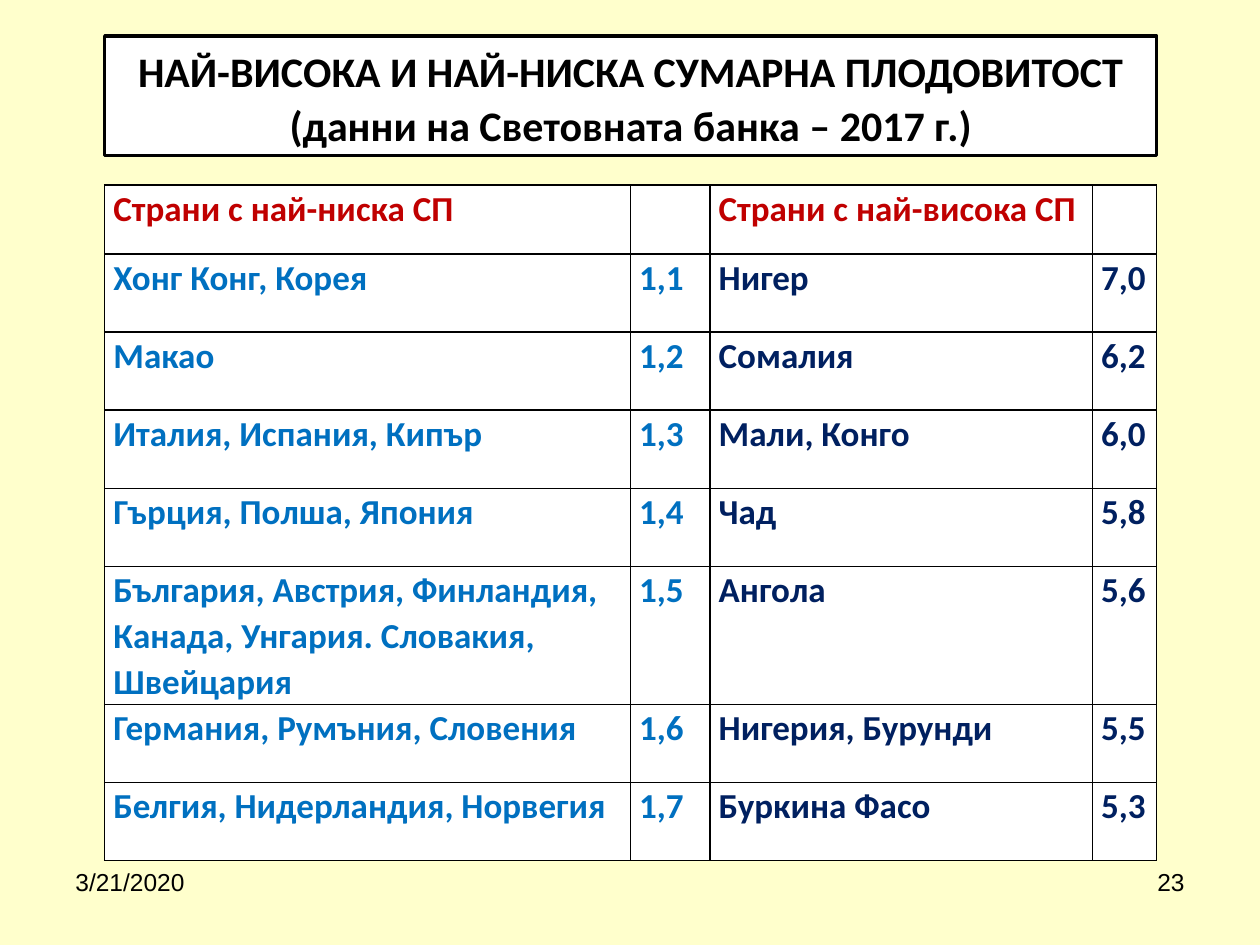
"""Build the slide comparing countries with the lowest and highest total fertility."""
from dataclasses import dataclass

from lxml import etree
from pptx import Presentation
from pptx.dml.color import RGBColor
from pptx.enum import shapes, text
from pptx.oxml import ns
from pptx.util import Pt

TITLE = ["НАЙ-ВИСОКА И НАЙ-НИСКА СУМАРНА ПЛОДОВИТОСТ",
         "(данни на Световната банка – 2017 г.)"]
HEADER = ("Страни с най-ниска СП", "", "Страни с най-висока СП", "")
COUNTRIES = [
    ("Хонг Конг, Корея", "1,1", "Нигер", "7,0"),
    ("Макао", "1,2", "Сомалия", "6,2"),
    ("Италия, Испания, Кипър", "1,3", "Мали, Конго", "6,0"),
    ("Гърция, Полша, Япония", "1,4", "Чад", "5,8"),
    ("България, Австрия, Финландия, Канада, Унгария. Словакия, Швейцария",
     "1,5", "Ангола", "5,6"),
    ("Германия, Румъния, Словения", "1,6", "Нигерия, Бурунди", "5,5"),
    ("Белгия, Нидерландия, Норвегия", "1,7", "Буркина Фасо", "5,3"),
]
DATE, NUMBER = "3/21/2020", "23"

COLUMN_WIDTHS = (300.4, 45.5, 218.5, 36.8)
HEADER_HEIGHT, ROW_HEIGHT, TALL_ROW_HEIGHT = 39.6, 44.64, 78.8
TALL_ROW = 5
LEFT, TITLE_TOP, TITLE_HEIGHT, TABLE_TOP = 59.8, 20.6, 68.4, 105.6
PAGE_WIDTH, PAGE_HEIGHT, MARGIN = 720, 540, 36
FOOTER_TOP, FOOTER_WIDTH, FOOTER_HEIGHT = 491.8, 168, 37.5


@dataclass(frozen=True)
class Theme:
    page: str = "FFFFCC"
    panel: str = "FFFFFF"
    ink: str = "000000"
    header: str = "C00000"
    lowest: str = "0070C0"
    highest: str = "002060"
    body_font: str = "Calibri"
    footer_font: str = "Arial"
    title_size: int = 24
    table_size: int = 20
    footer_size: int = 14
    line_spacing: float = 1.07


THEME = Theme()


def paint(fill, color):
    fill.solid()
    fill.fore_color.rgb = RGBColor.from_string(color)


def style(para, font, size, color, bold=False, align=text.PP_ALIGN.LEFT):
    para.alignment = align
    for span in para.runs:
        span.font.name = font
        span.font.size = Pt(size)
        span.font.bold = bold
        span.font.color.rgb = RGBColor.from_string(color)


def add_title(page):
    box = page.shapes.add_shape(shapes.MSO_SHAPE.RECTANGLE, Pt(LEFT), Pt(TITLE_TOP),
                                Pt(sum(COLUMN_WIDTHS)), Pt(TITLE_HEIGHT))
    box.shadow.inherit = False
    paint(box.fill, THEME.panel)
    paint(box.line.fill, THEME.ink)
    box.line.width = Pt(2)
    frame = box.text_frame
    frame.word_wrap = True
    frame.auto_size = text.MSO_AUTO_SIZE.SHAPE_TO_FIT_TEXT
    frame.vertical_anchor = text.MSO_ANCHOR.TOP
    frame.text = "\n".join(TITLE)
    for para in frame.paragraphs:
        para.line_spacing = THEME.line_spacing
        style(para, THEME.body_font, THEME.title_size, THEME.ink, True, text.PP_ALIGN.CENTER)
    frame.paragraphs[-1].space_after = Pt(8)


def add_borders(cell):
    properties = cell._tc.get_or_add_tcPr()
    for side in ("a:lnL", "a:lnR", "a:lnT", "a:lnB"):
        line = etree.SubElement(properties, ns.qn(side), w=str(Pt(1)))
        solid = etree.SubElement(line, ns.qn("a:solidFill"))
        etree.SubElement(solid, ns.qn("a:srgbClr"), val=THEME.ink)


def fill_cell(cell, words, color):
    cell.margin_left = cell.margin_right = Pt(5)
    cell.margin_top = cell.margin_bottom = 0
    add_borders(cell)
    paint(cell.fill, THEME.panel)
    if words:
        cell.text_frame.text = words
        para = cell.text_frame.paragraphs[0]
        para.line_spacing = THEME.line_spacing
        style(para, THEME.body_font, THEME.table_size, color, bold=True)


def add_country_table(page):
    rows = [HEADER, *COUNTRIES]
    heights = [HEADER_HEIGHT] + [ROW_HEIGHT] * len(COUNTRIES)
    heights[TALL_ROW] = TALL_ROW_HEIGHT
    table = page.shapes.add_table(len(rows), len(HEADER), Pt(LEFT), Pt(TABLE_TOP),
                                  Pt(sum(COLUMN_WIDTHS)), Pt(sum(heights))).table
    table.first_row = table.horz_banding = False
    for column, width in zip(table.columns, COLUMN_WIDTHS):
        column.width = Pt(width)
    for r, (row, height) in enumerate(zip(rows, heights)):
        table.rows[r].height = Pt(height)
        for c, words in enumerate(row):
            body_color = THEME.lowest if c < 2 else THEME.highest
            fill_cell(table.cell(r, c), words, body_color if r else THEME.header)


def add_footer(page, words, left, align):
    box = page.shapes.add_textbox(Pt(left), Pt(FOOTER_TOP), Pt(FOOTER_WIDTH), Pt(FOOTER_HEIGHT))
    box.text_frame.word_wrap = True
    box.text_frame.text = words
    style(box.text_frame.paragraphs[0], THEME.footer_font, THEME.footer_size,
          THEME.ink, align=align)


def main():
    deck = Presentation()
    deck.slide_width, deck.slide_height = Pt(PAGE_WIDTH), Pt(PAGE_HEIGHT)
    page = deck.slides.add_slide(deck.slide_layouts[6])
    paint(page.background.fill, THEME.page)
    add_footer(page, DATE, MARGIN, text.PP_ALIGN.LEFT)
    add_footer(page, NUMBER, PAGE_WIDTH - MARGIN - FOOTER_WIDTH, text.PP_ALIGN.RIGHT)
    add_country_table(page)
    add_title(page)
    deck.save("out.pptx")


if __name__ == "__main__":
    main()
